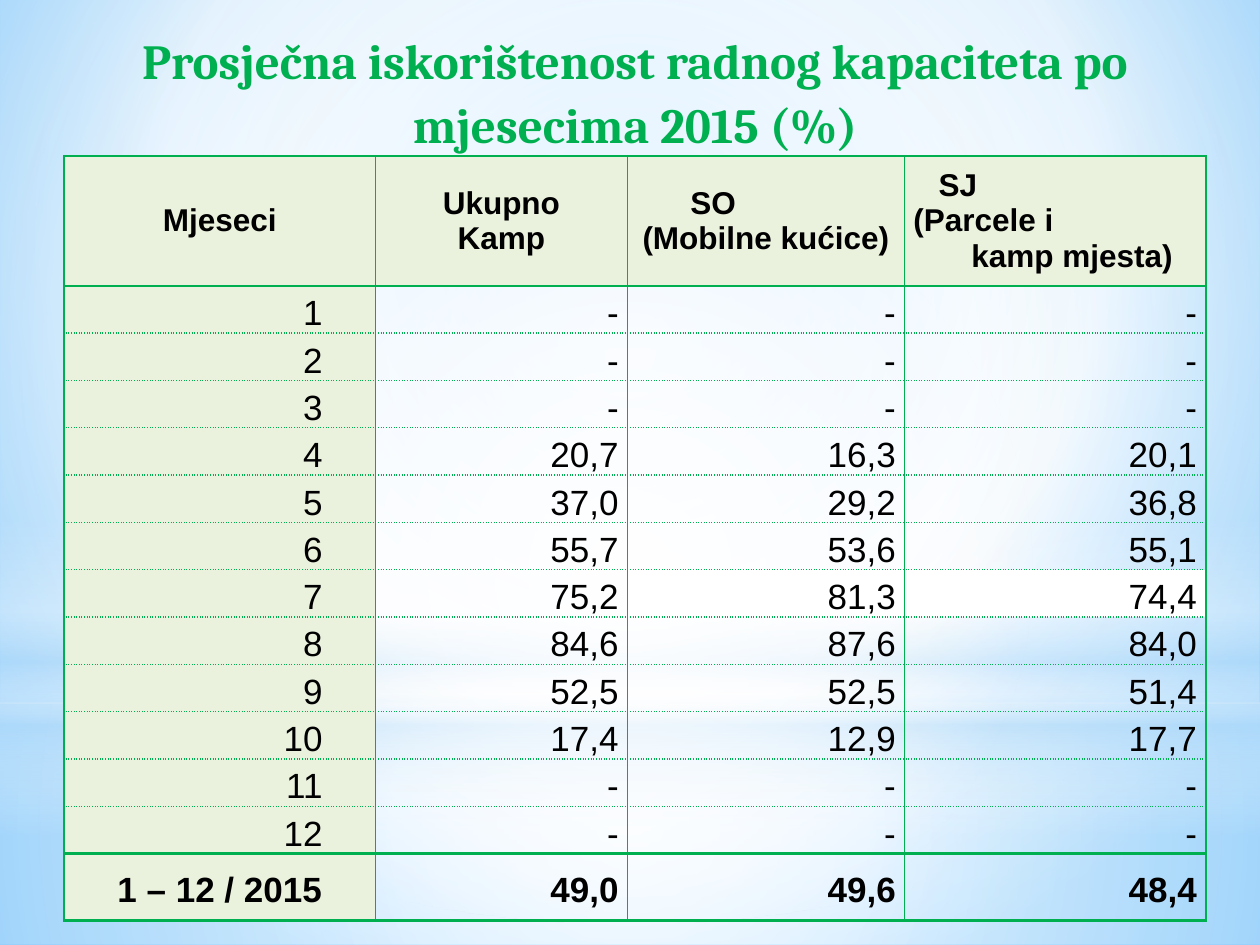
from dataclasses import dataclass

from pptx import Presentation
from pptx.dml.color import RGBColor
from pptx.enum.shapes import MSO_SHAPE as Shape
from pptx.enum.text import MSO_ANCHOR as Anchor, PP_ALIGN as Align
from pptx.oxml import parse_xml
from pptx.oxml.ns import nsdecls, qn
from pptx.util import Inches, Pt


@dataclass(frozen=True)
class Theme:
    green: str = "00B050"
    pale_green: str = "EAF1DD"
    white: str = "FFFFFF"
    black: str = "000000"
    haze: str = "B4DCFA"
    sky: str = "9ED5FF"
    deep_sky: str = "5BB9FF"
    title_font: str = "Cambria"
    body_font: str = "Arial"
    title_size: int = 28
    header_size: int = 18
    body_size: int = 20
    thin: float = 1
    thick: float = 1.5


THEME = Theme()
WIDTH, HEIGHT = Inches(10), Inches(7.5)
CENTRE = (50, 50, 50, 50)
PLAIN_STYLE = "{2D5ABB26-0587-4C30-8999-92F81FD0307C}"

TITLE = "Prosječna iskorištenost radnog kapaciteta po mjesecima 2015 (%)"
# Each header is a list of lines: (text, left indent in inches)
HEADERS = [
    (Align.CENTER, [("Mjeseci", 0)]),
    (Align.CENTER, [("Ukupno", 0), ("Kamp", 0)]),
    (Align.LEFT, [("SO", 0.43), ("(Mobilne kućice)", 0.05)]),
    (Align.LEFT, [("SJ", 0.2), ("(Parcele i", 0), ("kamp mjesta)", 0.46)]),
]
NO_DATA = ("-", "-", "-")
OCCUPANCY = [
    NO_DATA, NO_DATA, NO_DATA,
    ("20,7", "16,3", "20,1"),
    ("37,0", "29,2", "36,8"),
    ("55,7", "53,6", "55,1"),
    ("75,2", "81,3", "74,4"),
    ("84,6", "87,6", "84,0"),
    ("52,5", "52,5", "51,4"),
    ("17,4", "12,9", "17,7"),
    NO_DATA, NO_DATA,
]
TOTAL = ("1 – 12 / 2015", "49,0", "49,6", "48,4")

COLUMN_WIDTHS = [2.47, 2, 2.2, 2.39]
MONTHS = len(OCCUPANCY)
MONTHS_HEIGHT = 4.51
ROW_HEIGHTS = [0.77, 1.03] + [MONTHS_HEIGHT / MONTHS] * MONTHS + [0.53]
HEADER_ROW, FIRST_MONTH = 1, 2
TOTAL_ROW = FIRST_MONTH + MONTHS
LAST_COLUMN = len(COLUMN_WIDTHS) - 1
WHITE_CELLS = {(FIRST_MONTH + 6, 2), (FIRST_MONTH + 6, 3)}


def paint_gradient(fill, holder, stops, focus=None):
    """Stops are (position %, colour, opacity %); no focus means top to bottom."""
    fill.gradient()
    marks = "".join(
        f'<a:gs pos="{pos * 1000}"><a:srgbClr val="{colour}">'
        f'<a:alpha val="{opacity * 1000}"/></a:srgbClr></a:gs>'
        for pos, colour, opacity in stops)
    if focus:
        sides = " ".join(f'{side}="{share * 1000}"' for side, share in zip("ltrb", focus))
        course = f'<a:path path="circle"><a:fillToRect {sides}/></a:path>'
    else:
        course = '<a:lin ang="5400000" scaled="0"/>'
    gradient = parse_xml(f'<a:gradFill {nsdecls("a")} rotWithShape="1">'
                         f'<a:gsLst>{marks}</a:gsLst>{course}</a:gradFill>')
    holder.replace(holder.find(qn("a:gradFill")), gradient)


def add_glow(slide, kind, top, height, stops, focus=None):
    """Full-width glow; top and height are shares of the slide height."""
    glow = slide.shapes.add_shape(kind, 0, int(HEIGHT * top), WIDTH, int(HEIGHT * height))
    glow.shadow.inherit = False
    glow.line.fill.background()
    paint_gradient(glow.fill, glow.element.spPr, stops, focus)


def add_backdrop(slide):
    white, haze = THEME.white, THEME.haze
    background = slide.background.fill
    background.solid()
    paint_gradient(background, slide.element.find(".//" + qn("p:bgPr")),
                   [(0, THEME.sky, 100), (60, white, 100), (100, THEME.deep_sky, 100)],
                   (20, 10, 20, 60))
    horizon = 0.744
    add_glow(slide, Shape.RECTANGLE, horizon, 1 - horizon,
             [(0, white, 91), (37, white, 76), (100, haze, 79)], CENTRE)
    add_glow(slide, Shape.RECTANGLE, 0, horizon,
             [(0, white, 89), (48, white, 62), (100, haze, 79)], CENTRE)
    add_glow(slide, Shape.RECTANGLE, 0.55, 0.333,
             [(0, white, 0), (29, white, 30), (45, haze, 40),
              (55, white, 26), (65, haze, 60), (100, white, 0)])
    add_glow(slide, Shape.OVAL, 0.233, horizon,
             [(0, white, 100), (56, white, 0)], CENTRE)


def write(cell, lines, size=THEME.body_size, font=THEME.body_font, colour=THEME.black,
          bold=False, align=Align.RIGHT, anchor=Anchor.MIDDLE, spacing=1.15, right=0.07):
    """Lines are (text, left indent) pairs, one paragraph each."""
    cell.vertical_anchor = anchor
    cell.margin_left, cell.margin_right = Inches(0.07), Inches(right)
    cell.margin_top = cell.margin_bottom = 0
    frame = cell.text_frame
    for number, (text, indent) in enumerate(lines):
        paragraph = frame.add_paragraph() if number else frame.paragraphs[0]
        paragraph.alignment, paragraph.line_spacing = align, spacing
        if indent:
            paragraph._p.get_or_add_pPr().set("marL", str(Inches(indent)))
        run = paragraph.add_run()
        run.text = text
        run.font.size, run.font.name, run.font.bold = Pt(size), font, bold
        run.font.color.rgb = RGBColor.from_string(colour)


def border(cell, **edges):
    """Each edge (L, R, T, B) is (width, dash)."""
    properties = cell._tc.get_or_add_tcPr()
    for place, side in enumerate(side for side in "LRTB" if side in edges):
        width, dash = edges[side]
        properties.insert(place, parse_xml(
            f'<a:ln{side} {nsdecls("a")} w="{Pt(width)}"><a:solidFill>'
            f'<a:srgbClr val="{THEME.green}"/></a:solidFill>'
            f'<a:prstDash val="{dash}"/></a:ln{side}>'))


def style_cell(cell, row, column):
    """Fill and borders follow from the cell's place in the grid."""
    if row == HEADER_ROW or (row > 0 and column == 0):
        colour = THEME.pale_green
    else:
        colour = THEME.white if (row, column) in WHITE_CELLS else None
    if colour:
        cell.fill.solid()
        cell.fill.fore_color.rgb = RGBColor.from_string(colour)
    else:
        cell.fill.background()

    heavy, light, dotted = (THEME.thick, "solid"), (THEME.thin, "solid"), (THEME.thin, "dot")
    if row == 0:
        border(cell, B=heavy)
        return
    border(cell,
           L=heavy if column == 0 else light,
           R=heavy if column == LAST_COLUMN else light,
           T=dotted if FIRST_MONTH < row < TOTAL_ROW else heavy,
           B=dotted if FIRST_MONTH <= row < TOTAL_ROW - 1 else heavy)


def add_occupancy_table(slide):
    frame = slide.shapes.add_table(
        len(ROW_HEIGHTS), len(COLUMN_WIDTHS), Inches(0.51), Inches(0.21),
        Inches(sum(COLUMN_WIDTHS)), Inches(sum(ROW_HEIGHTS)))
    table = frame.table
    table.first_row = table.horz_banding = False
    next(frame.element.iter(qn("a:tableStyleId"))).text = PLAIN_STYLE
    for column, width in zip(table.columns, COLUMN_WIDTHS):
        column.width = Inches(width)
    for row, height in zip(table.rows, ROW_HEIGHTS):
        row.height = Inches(height)
    for row in range(len(ROW_HEIGHTS)):
        for column in range(len(COLUMN_WIDTHS)):
            style_cell(table.cell(row, column), row, column)

    # Title across all columns
    title = table.cell(0, 0)
    title.merge(table.cell(0, LAST_COLUMN))
    write(title, [(TITLE, 0)], size=THEME.title_size, font=THEME.title_font,
          colour=THEME.green, bold=True, align=Align.CENTER)

    # Column headers
    for column, (align, lines) in enumerate(HEADERS):
        write(table.cell(HEADER_ROW, column), lines, size=THEME.header_size,
              bold=True, align=align, spacing=1.0)

    # Months
    for month, values in enumerate(OCCUPANCY, 1):
        for column, text in enumerate((str(month), *values)):
            write(table.cell(HEADER_ROW + month, column), [(text, 0)],
                  anchor=Anchor.BOTTOM, right=0.07 if column else 0.42)

    # Yearly total
    for column, text in enumerate(TOTAL):
        write(table.cell(TOTAL_ROW, column), [(text, 0)], bold=True,
              align=Align.RIGHT if column else Align.CENTER)


def main():
    deck = Presentation()
    deck.slide_width, deck.slide_height = WIDTH, HEIGHT
    slide = deck.slides.add_slide(deck.slide_layouts[6])
    add_backdrop(slide)
    add_occupancy_table(slide)
    deck.save("out.pptx")


if __name__ == "__main__":
    main()
